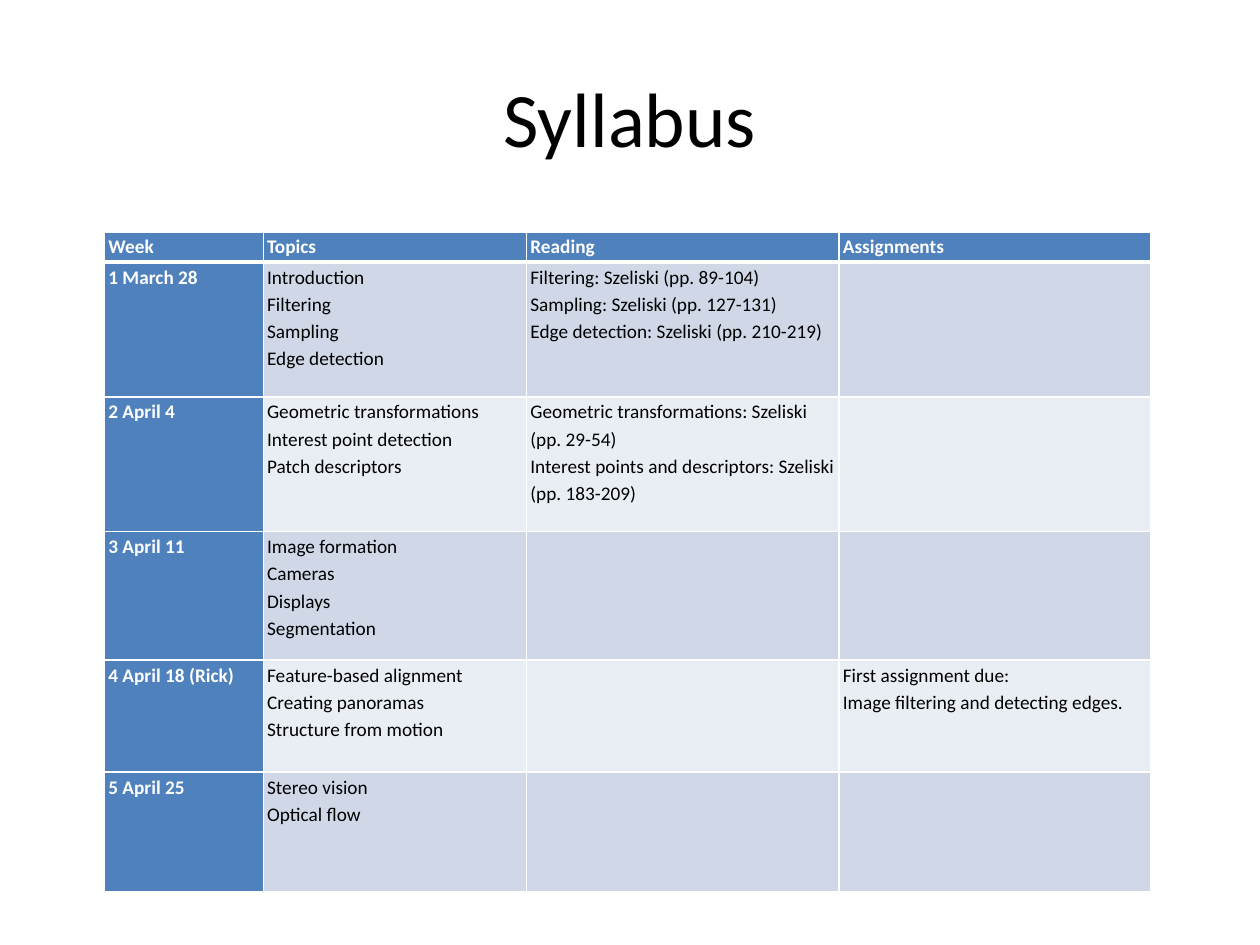
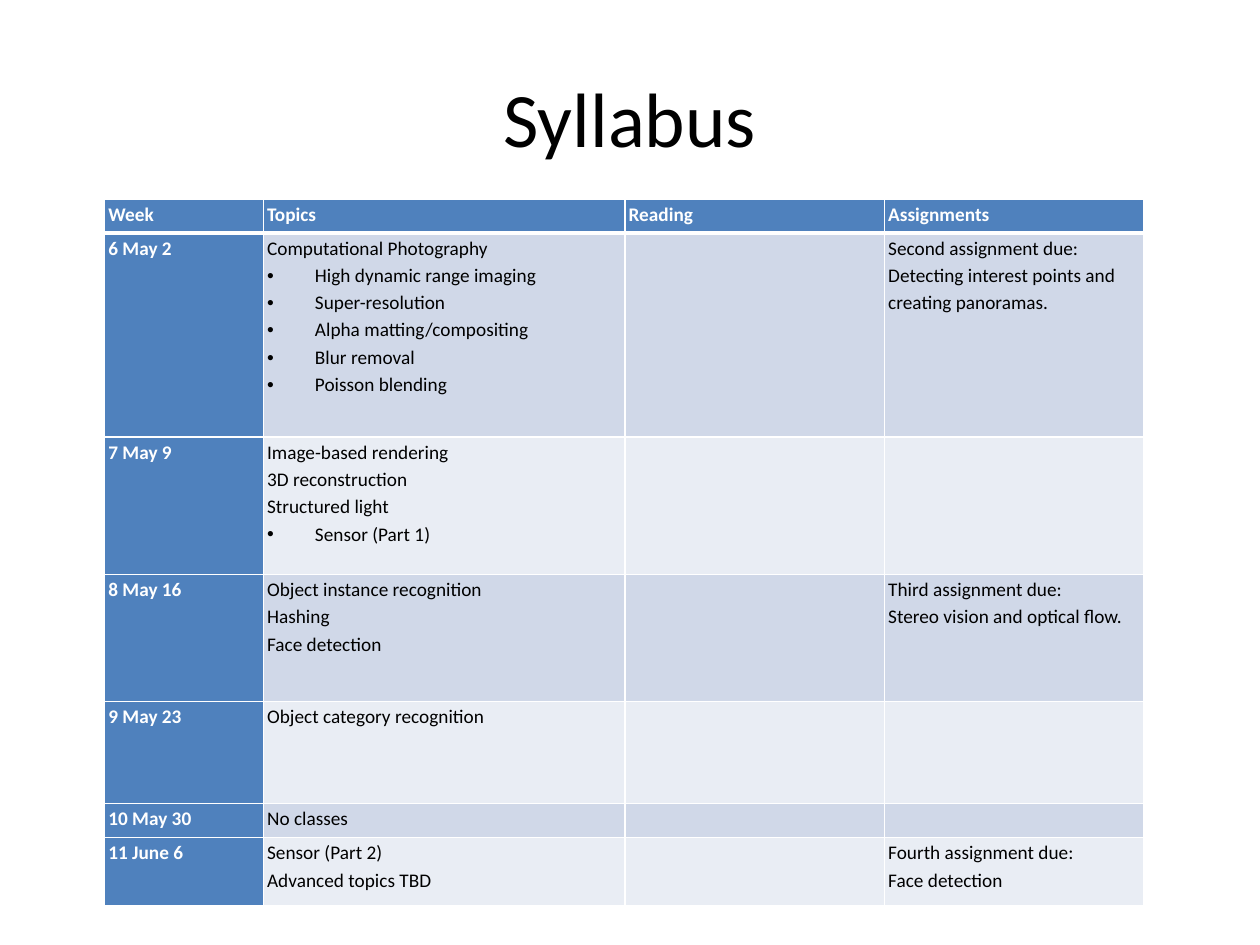
"""Build the two syllabus slides, each a title above a weekly schedule table."""
from lxml.etree import SubElement
from pptx import Presentation
from pptx.dml.color import RGBColor
from pptx.enum.text import MSO_ANCHOR, PP_ALIGN
from pptx.oxml.ns import qn
from pptx.util import Inches, Pt

FONT = "Calibri"
BLACK, WHITE, BLUE = "000000", "FFFFFF", "4F81BD"
BANDS = ("D0D8E8", "E9EDF4")
BULLET = "•"
TITLE = "Syllabus"
HEADINGS = ("Week", "Topics", "Reading", "Assignments")

SCHEDULES = [
    {
        "top": 1.84,
        "columns": (1.26, 2.09, 2.48, 2.47),
        "header_height": 0.24,
        "weeks": [
            (1.07, "1 March 28",
             ["Introduction", "Filtering", "Sampling", "Edge detection"],
             ["Filtering: Szeliski (pp. 89-104)",
              "Sampling: Szeliski (pp. 127-131)",
              "Edge detection: Szeliski (pp. 210-219)"], []),
            (1.07, "2 April 4",
             ["Geometric transformations", "Interest point detection",
              "Patch descriptors"],
             ["Geometric transformations: Szeliski (pp. 29-54)",
              "Interest points and descriptors: Szeliski (pp. 183-209)"], []),
            (1.02, "3 April 11",
             ["Image formation", "Cameras", "Displays", "Segmentation"], [], []),
            (0.89, "4 April 18 (Rick)",
             ["Feature-based alignment", "Creating panoramas",
              "Structure from motion"], [],
             ["First assignment due:", "Image filtering and detecting edges."]),
            (0.95, "5 April 25", ["Stereo vision", "Optical flow"], [], []),
        ],
    },
    {
        "top": 1.58,
        "columns": (1.26, 2.87, 2.06, 2.06),
        "header_height": 0.27,
        "weeks": [
            (1.62, "6 May 2",
             ["Computational Photography", "•High dynamic range imaging",
              "•Super-resolution", "•Alpha matting/compositing",
              "•Blur removal", "•Poisson blending"], [],
             ["Second assignment due:",
              "Detecting interest points and creating panoramas."]),
            (1.09, "7 May 9",
             ["Image-based rendering", "3D reconstruction",
              "Structured light", "•Sensor (Part 1)"], [], []),
            (1.01, "8 May 16",
             ["Object instance recognition", "Hashing", "Face detection"], [],
             ["Third assignment due:", "Stereo vision and optical flow."]),
            (0.81, "9 May 23", ["Object category recognition"], [], []),
            (0.27, "10 May 30", ["No classes"], [], []),
            (0.54, "11 June 6", ["Sensor (Part 2)", "Advanced topics TBD"], [],
             ["Fourth assignment due:", "Face detection"]),
        ],
    },
]


def color(value):
    return RGBColor.from_string(value)


def style_font(para, size, value, bold=False):
    font = para.font
    font.name, font.size, font.bold = FONT, Pt(size), bold
    font.color.rgb = color(value)


def add_title(page):
    box = page.shapes.add_textbox(Inches(0.5), Inches(0.3), Inches(9), Inches(1.25))
    frame = box.text_frame
    frame.word_wrap = True
    frame.vertical_anchor = MSO_ANCHOR.MIDDLE
    frame.text = TITLE
    para = frame.paragraphs[0]
    para.alignment = PP_ALIGN.CENTER
    style_font(para, 44, BLACK)


def add_borders(cell, top, bottom):
    properties = cell._tc.get_or_add_tcPr()
    for side, width in (("L", 1), ("R", 1), ("T", top), ("B", bottom)):
        line = SubElement(properties, qn(f"a:ln{side}"), w=str(Pt(width)))
        fill = SubElement(line, qn("a:solidFill"))
        SubElement(fill, qn("a:srgbClr"), val=WHITE)


def add_bullet(para):
    properties = para._p.get_or_add_pPr()
    properties.set("marL", str(Inches(0.38)))
    properties.set("indent", str(-Inches(0.38)))
    SubElement(properties, qn("a:buFont"), typeface="Arial")
    SubElement(properties, qn("a:buChar"), char=BULLET)


def fill_cell(cell, lines, row, column):
    heading = row == 0 or column == 0
    add_borders(cell, 3 if row == 1 else 1, 3 if row == 0 else 1)
    cell.fill.solid()
    cell.fill.fore_color.rgb = color(BLUE if heading else BANDS[(row - 1) % 2])
    cell.margin_left = cell.margin_right = Inches(0.03)
    cell.margin_top = cell.margin_bottom = 0
    cell.text_frame.text = "\n".join(line.lstrip(BULLET) for line in lines)
    for para, line in zip(cell.text_frame.paragraphs, lines or [""]):
        if line.startswith(BULLET):
            add_bullet(para)
        para.line_spacing = 1.15
        style_font(para, 11, WHITE if heading else BLACK, heading)


def add_schedule(page, schedule):
    columns, weeks = schedule["columns"], schedule["weeks"]
    heights = [schedule["header_height"]] + [week[0] for week in weeks]
    rows = [[[heading] for heading in HEADINGS]]
    rows += [[[name], *details] for _, name, *details in weeks]
    table = page.shapes.add_table(
        len(rows), len(columns), Inches(0.83), Inches(schedule["top"]),
        Inches(sum(columns)), Inches(sum(heights))).table
    table.first_col = True
    for column, width in zip(table.columns, columns):
        column.width = Inches(width)
    for row, (height, cells) in enumerate(zip(heights, rows)):
        table.rows[row].height = Inches(height)
        for column, lines in enumerate(cells):
            fill_cell(table.cell(row, column), lines, row, column)


def main():
    deck = Presentation()
    deck.slide_width, deck.slide_height = Inches(10), Inches(7.5)
    for schedule in SCHEDULES:
        page = deck.slides.add_slide(deck.slide_layouts[6])
        add_title(page)
        add_schedule(page, schedule)
    deck.save("out.pptx")


if __name__ == "__main__":
    main()
